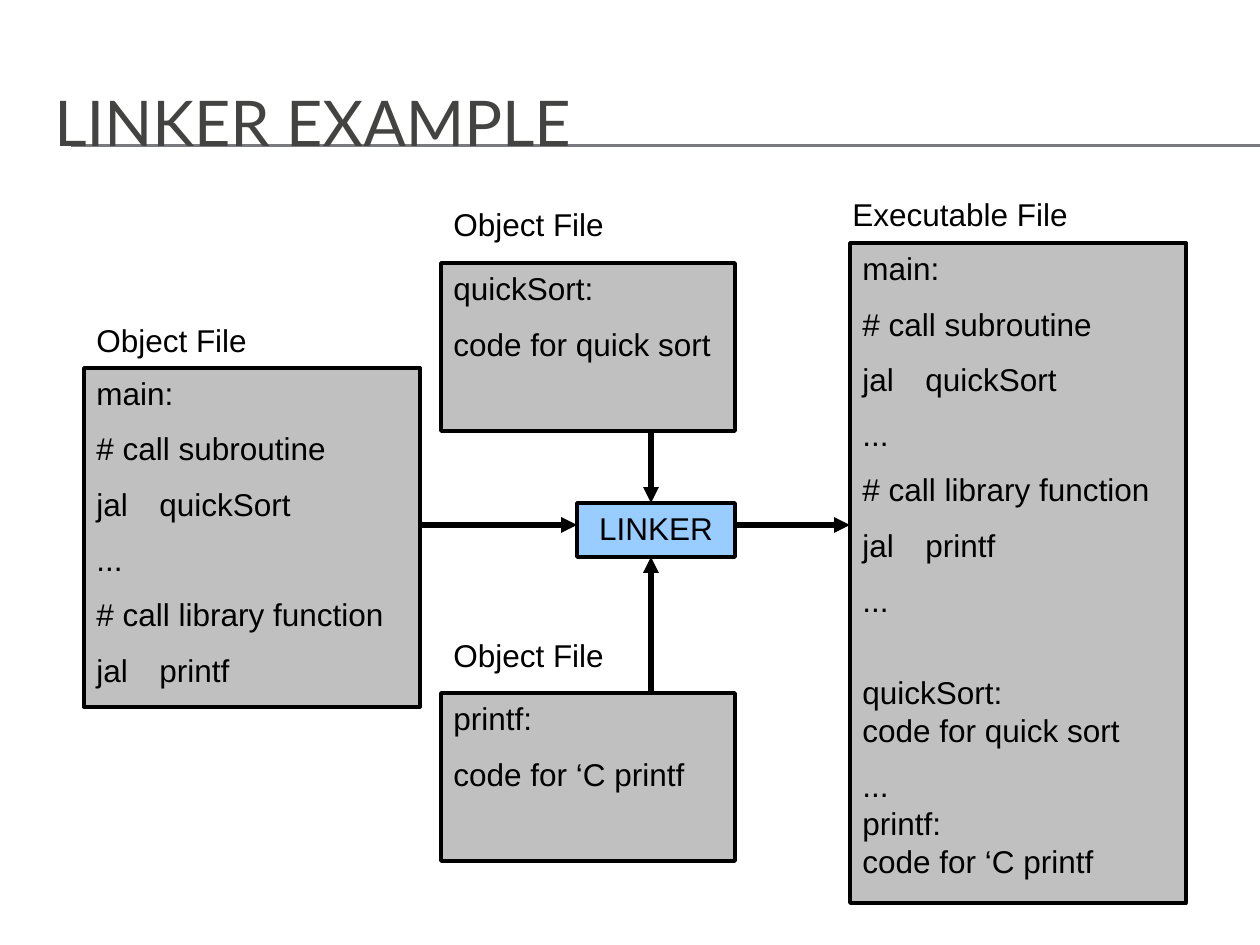
from lxml import etree
from pptx import Presentation
from pptx.dml.color import RGBColor
from pptx.enum.shapes import MSO_CONNECTOR as CONN, MSO_SHAPE as SHAPE
from pptx.enum.text import MSO_ANCHOR as ANCHOR, PP_ALIGN as ALIGN
from pptx.oxml.ns import qn
from pptx.util import Pt

PX = 914400 / 126
COLORS = {"black": "000000", "title": "434342", "rule": "797B7E",
          "file": "C0C0C0", "linker": "99CCFF"}
GAP = 10        # points between code lines
SECTION = 31    # points before the linked-in routines

prs = Presentation()
prs.slide_width, prs.slide_height = round(1260 * PX), round(945 * PX)
s = prs.slides.add_slide(prs.slide_layouts[6])


def add_text(box, lines, fill=None, size=18, font="Arial", color="black",
             align=ALIGN.LEFT, anchor=ANCHOR.TOP):
    """Add text in a box; a line is a string or a (string, space before) pair."""
    place = [round(v * PX) for v in box]
    if fill:
        sp = s.shapes.add_shape(SHAPE.RECTANGLE, *place)
        sp.shadow.inherit = False
        sp.fill.solid()
        sp.fill.fore_color.rgb = RGBColor.from_string(COLORS[fill])
        sp.line.color.rgb = RGBColor.from_string(COLORS["black"])
        sp.line.width = Pt(2)
    else:
        sp = s.shapes.add_textbox(*place)
    tf = sp.text_frame
    tf.word_wrap = True
    tf.vertical_anchor = anchor
    for i, line in enumerate(lines):
        text, gap = (line, GAP) if isinstance(line, str) else line
        p = tf.add_paragraph() if i else tf.paragraphs[0]
        p.alignment = align
        p.space_before = Pt(gap if i else 0)
        r = p.add_run()
        r.text = text
        r.font.size, r.font.name = Pt(size), font
        r.font.color.rgb = RGBColor.from_string(COLORS[color])


def add_line(points, color="black", width=3, arrow=True):
    c = s.shapes.add_connector(CONN.STRAIGHT, *[round(v * PX) for v in points])
    c.line.color.rgb = RGBColor.from_string(COLORS[color])
    c.line.width = Pt(width)
    if arrow:
        etree.SubElement(c.line._get_or_add_ln(), qn("a:tailEnd"), type="triangle")
    etree.SubElement(c._element.spPr, qn("a:effectLst"))


# Title and its double rule
for y in (145, 146):
    add_line((71, y, 1260, y), color="rule", width=0.75, arrow=False)
add_text((42, 63, 1197, 116), ["LINKER EXAMPLE"], size=36, font="Lato",
         color="title", anchor=ANCHOR.MIDDLE)

# Object files, linker and executable
main = ["main:", "# call subroutine", "jal\tquickSort", "...",
        "# call library function", "jal\tprintf"]
quick_sort = ["quickSort:", "code for quick sort"]
printf = ["printf:", "code for ‘C printf"]
executable = main + ["...", (quick_sort[0], SECTION), (quick_sort[1], 0), "..."]
executable += [(line, 0) for line in printf]

add_text((84, 368, 336, 339), main, fill="file")
add_text((441, 263, 294, 168), quick_sort, fill="file")
add_text((441, 693, 294, 168), printf, fill="file")
add_text((577, 503, 158, 54), ["LINKER"], fill="linker", align=ALIGN.CENTER)

for points in ((420, 525, 577, 525), (651, 431, 651, 503),
               (651, 693, 651, 557), (735, 525, 850, 525)):
    add_line(points)

add_text((850, 243, 336, 660), executable, fill="file")

# Captions
add_text((840, 189, 252, 50), ["Executable File"])
for x, y in ((84, 315), (441, 630), (441, 199)):
    add_text((x, y, 179, 50), ["Object File"])

prs.save("out.pptx")
